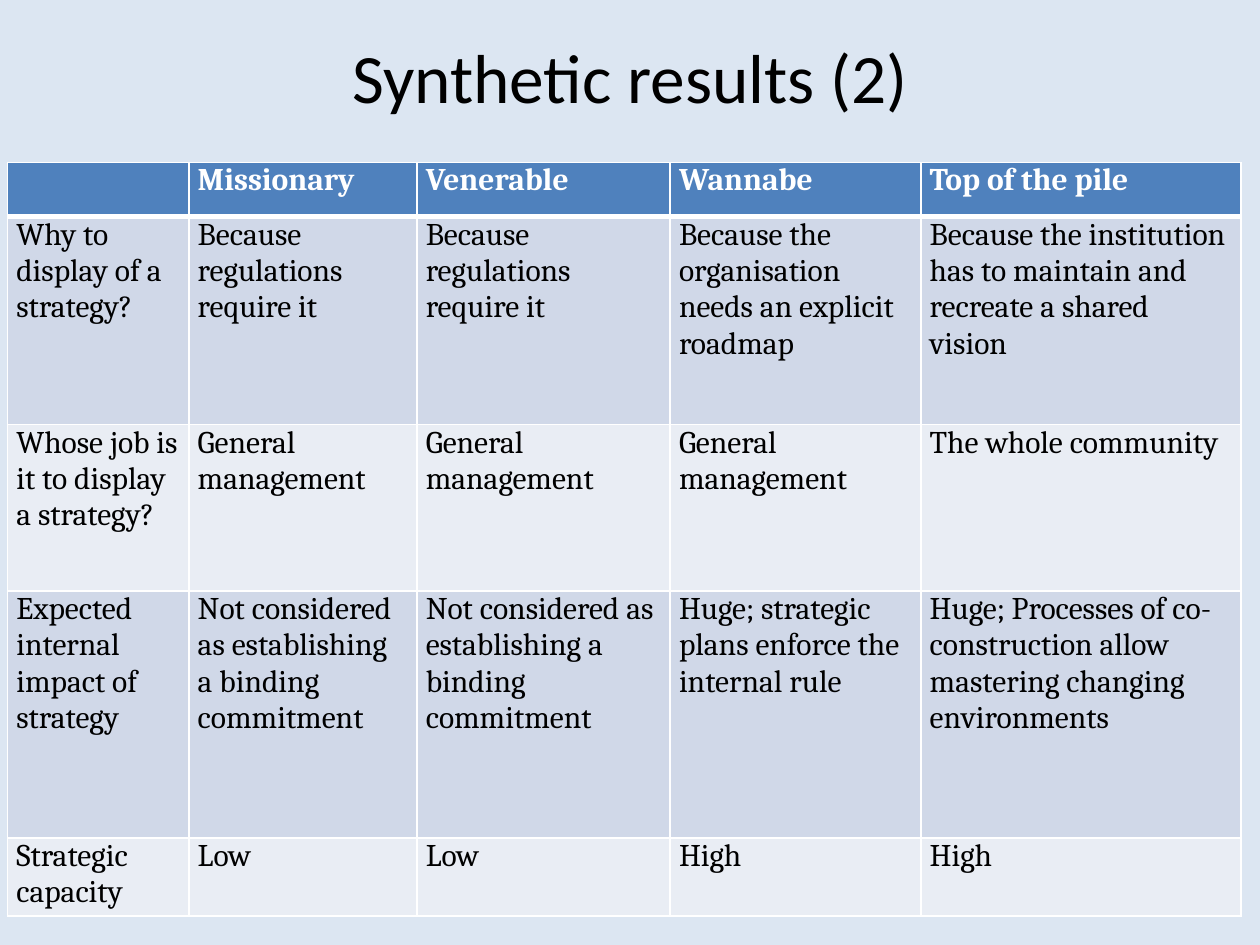
from lxml import etree
from pptx import Presentation
from pptx.dml.color import RGBColor
from pptx.enum.text import MSO_ANCHOR, PP_ALIGN
from pptx.oxml.ns import qn
from pptx.util import Inches, Pt

MIDDLE, CENTER, LEFT = MSO_ANCHOR.MIDDLE, PP_ALIGN.CENTER, PP_ALIGN.LEFT
WHITE, BLACK, BLUE = "FFFFFF", "000000", "4F81BD"
BANDS = ["D0D8E8", "E9EDF4"]


def color(code):
    return RGBColor.from_string(code)


def write(frame, text, size=18, font="Cambria", ink=BLACK, bold=False, align=LEFT):
    para = frame.paragraphs[0]
    para.alignment = align
    run = para.add_run()
    run.text = text
    run.font.size = Pt(size)
    run.font.name = font
    run.font.bold = bold
    run.font.color.rgb = color(ink)


deck = Presentation()
deck.slide_width, deck.slide_height = Inches(10), Inches(7.5)
slide = deck.slides.add_slide(deck.slide_layouts[6])
slide.background.fill.solid()
slide.background.fill.fore_color.rgb = color("DCE6F2")

# Title
title = slide.shapes.add_textbox(Inches(0.5), Inches(0.3), Inches(9), Inches(0.61))
title.text_frame.word_wrap = True
title.text_frame.vertical_anchor = MIDDLE
write(title.text_frame, "Synthetic results (2)", size=39.6, font="Calibri", align=CENTER)

# Table contents and sizes
rows = [
    ["", "Missionary", "Venerable", "Wannabe", "Top of the pile"],
    ["Why to display of a strategy?",
     "Because regulations require it",
     "Because regulations require it",
     "Because the organisation needs an explicit roadmap",
     "Because the institution has to maintain and recreate a shared vision"],
    ["Whose job is it to display a strategy?",
     "General management", "General management", "General management",
     "The whole community"],
    ["Expected internal impact of strategy",
     "Not considered as establishing a binding commitment",
     "Not considered as establishing a binding commitment",
     "Huge; strategic plans enforce the internal rule",
     "Huge; Processes of co-construction allow mastering changing environments"],
    ["Strategic capacity", "Low", "Low", "High", "High"],
]
widths = [1.44, 1.81, 2.01, 1.99, 2.54]
heights = [0.43, 1.65, 1.32, 1.96, 0.62]

table = slide.shapes.add_table(
    len(rows), len(widths), Inches(0.06), Inches(1.29),
    Inches(sum(widths)), Inches(sum(heights))).table
for col, width in zip(table.columns, widths):
    col.width = Inches(width)
for row, height in zip(table.rows, heights):
    row.height = Inches(height)

# Cells: borders first, then fill, as the file format orders them
for r, row in enumerate(rows):
    head = r == 0
    for c, text in enumerate(row):
        cell = table.cell(r, c)
        cell.margin_left = cell.margin_right = Inches(0.07)
        cell.margin_top = cell.margin_bottom = 0
        props = cell._tc.get_or_add_tcPr()
        for side in "LRTB":
            thick = (head and side == "B") or (r == 1 and side == "T")
            line = etree.SubElement(props, qn("a:ln" + side), w=str(Pt(3 if thick else 1)))
            paint = etree.SubElement(line, qn("a:solidFill"))
            etree.SubElement(paint, qn("a:srgbClr"), val=WHITE)
        cell.fill.solid()
        cell.fill.fore_color.rgb = color(BLUE if head else BANDS[(r - 1) % 2])
        if text:
            write(cell.text_frame, text, ink=WHITE if head else BLACK, bold=head)

deck.save("out.pptx")
